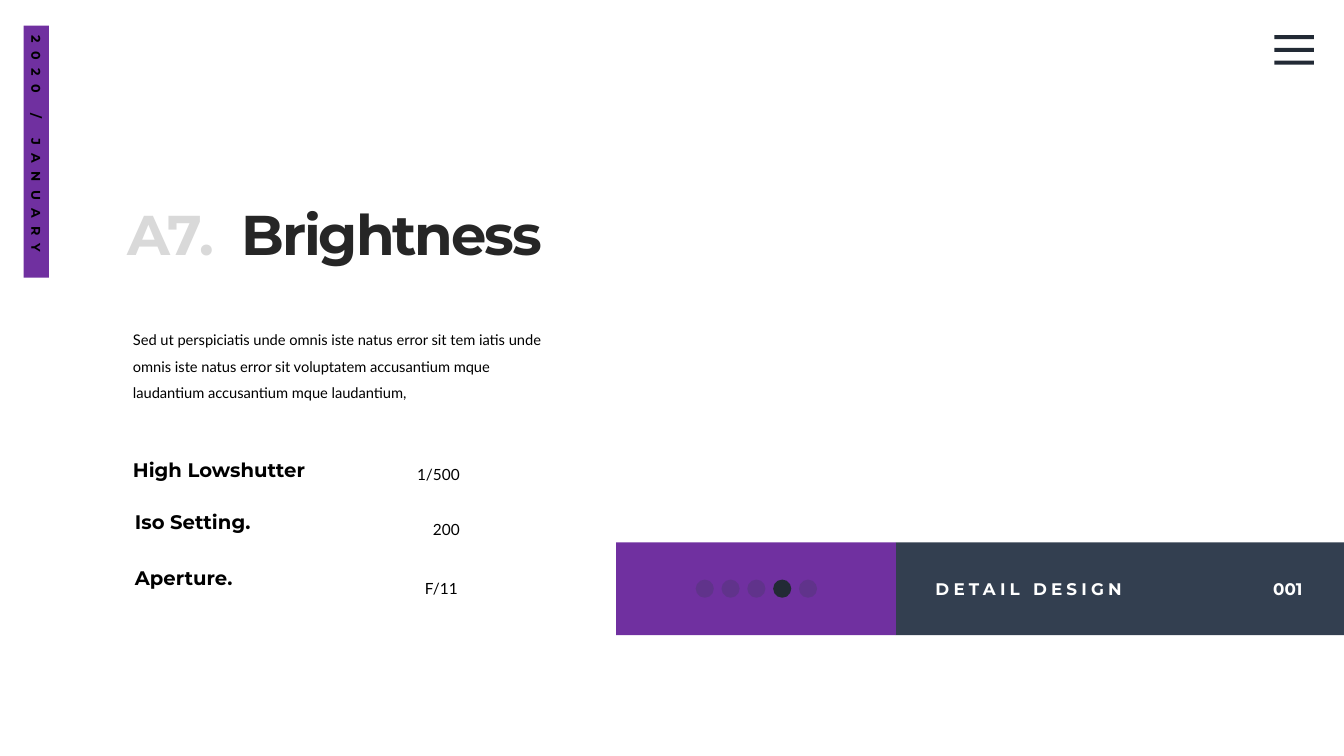
from lxml import etree
from pptx import Presentation
from pptx.dml.color import RGBColor
from pptx.enum.shapes import MSO_SHAPE
from pptx.enum.text import MSO_ANCHOR, MSO_AUTO_SIZE, PP_ALIGN
from pptx.oxml.ns import qn
from pptx.util import Inches, Pt

RECTANGLE, OVAL = MSO_SHAPE.RECTANGLE, MSO_SHAPE.OVAL
LEFT, RIGHT = PP_ALIGN.LEFT, PP_ALIGN.RIGHT
GROW, FIXED = MSO_AUTO_SIZE.SHAPE_TO_FIT_TEXT, MSO_AUTO_SIZE.NONE

WIDTH, HEIGHT = 13.33, 7.5
HEADING, BODY = "Montserrat", "Lato"
PURPLE, SLATE, NAVY = "7030A0", "333F50", "222A35"
WHITE, BLACK, PALE, CHARCOAL = "FFFFFF", "000000", "D9D9D9", "262626"

DATE = "2020 / JANUARY"
NUMBER, TITLE = "A7.", "Brightness"
INTRO = ("Sed ut perspiciatis unde omnis iste natus error sit tem iatis unde "
         "omnis iste natus error sit voluptatem accusantium mque "
         "laudantium accusantium mque laudantium,")
FOOTER, PAGE = "DETAIL DESIGN", "001"
# label, its left and top, value, its left and top
SETTINGS = [
    ("High Lowshutter", 1.22, 4.49, "1/500", 3.75, 4.47),
    ("Iso Setting.", 1.24, 5.01, "200", 3.75, 5.02),
    ("Aperture.", 1.24, 5.57, "F/11", 3.73, 5.6),
]
DOT_COUNT, ACTIVE_DOT = 5, 3
MENU_BAR_COUNT = 3

BAND_TOP, BAND_HEIGHT = 5.38, 0.92
BAND_LEFT, BAND_SPLIT = 6.11, WIDTH * 2 / 3
DOT_SIZE, DOT_STEP = 0.18, 0.256
MENU_STEP = 0.126


def color(hex_string):
    return RGBColor.from_string(hex_string)


def add_block(parent, kind, left, top, width, height, fill, opacity=None):
    """Add a borderless filled shape; opacity is a percentage."""
    shape = parent.shapes.add_shape(
        kind, Inches(left), Inches(top), Inches(width), Inches(height))
    shape.shadow.inherit = False
    shape.line.fill.background()
    shape.fill.solid()
    shape.fill.fore_color.rgb = color(fill)
    if opacity is not None:
        solid_color = shape.fill._xPr.find(".//" + qn("a:srgbClr"))
        etree.SubElement(solid_color, qn("a:alpha"), val=str(opacity * 1000))
    return shape


def write(shape, text, size, font, fill, bold=False, tracking=0, align=LEFT,
          line_spacing=None, wrap=False, fit=GROW):
    """Put one run into the shape; tracking is letter spacing in points."""
    frame = shape.text_frame
    frame.word_wrap = wrap
    frame.auto_size = fit
    paragraph = frame.paragraphs[0]
    paragraph.alignment = align
    if line_spacing:
        paragraph.line_spacing = line_spacing
    run = paragraph.add_run()
    run.text = text
    run.font.size = Pt(size)
    run.font.name = font
    run.font.bold = bold
    run.font.color.rgb = color(fill)
    if tracking:
        run._r.get_or_add_rPr().set("spc", str(int(tracking * 100)))


def add_text(slide, left, top, width, height, *content, **style):
    box = slide.shapes.add_textbox(
        Inches(left), Inches(top), Inches(width), Inches(height))
    write(box, *content, **style)


def add_footer(slide):
    add_block(slide, RECTANGLE, BAND_SPLIT, BAND_TOP,
              WIDTH - BAND_SPLIT, BAND_HEIGHT, SLATE)
    add_text(slide, 12.53, 5.69, 0.5, 0.3, PAGE, 12, HEADING, WHITE, bold=True)
    add_text(slide, 9.18, 5.69, 2.11, 0.3, FOOTER, 12, HEADING, WHITE,
             bold=True, tracking=3)
    add_block(slide, RECTANGLE, BAND_LEFT, BAND_TOP,
              BAND_SPLIT - BAND_LEFT, BAND_HEIGHT, PURPLE)
    dots = slide.shapes.add_group_shape()
    for index in range(DOT_COUNT):
        active = index == ACTIVE_DOT
        add_block(dots, OVAL, 6.9 + index * DOT_STEP, 5.75, DOT_SIZE, DOT_SIZE,
                  NAVY if active else SLATE, None if active else 25)


def add_date_and_menu(slide):
    date_tab = add_block(slide, RECTANGLE, -0.89, 1.38, 2.5, 0.25, PURPLE)
    date_tab.rotation = 90
    date_tab.text_frame.vertical_anchor = MSO_ANCHOR.MIDDLE
    write(date_tab, DATE, 9, HEADING, BLACK, bold=True, tracking=6)
    menu = slide.shapes.add_group_shape()
    for index in range(MENU_BAR_COUNT):
        add_block(menu, RECTANGLE, 12.64, 0.35 + index * MENU_STEP,
                  0.39, 0.04, NAVY)


def add_details(slide):
    add_text(slide, 1.17, 1.93, 1.13, 0.77, NUMBER, 40, HEADING, PALE, bold=True)
    add_text(slide, 2.3, 1.93, 3.33, 0.77, TITLE, 40, HEADING, CHARCOAL,
             bold=True, tracking=-1.5)
    add_text(slide, 1.22, 3.15, 4.41, 1.25, INTRO, 10.5, BODY, BLACK,
             line_spacing=1.5, wrap=True, fit=FIXED)
    for label, label_left, label_top, value, value_left, value_top in SETTINGS:
        add_text(slide, label_left, label_top, 2.64, 0.34, label, 14, HEADING,
                 BLACK, bold=True, wrap=True)
        add_text(slide, value_left, value_top, 0.91, 0.34, value, 11, BODY,
                 BLACK, align=RIGHT, line_spacing=1.5, wrap=True, fit=FIXED)


def main():
    presentation = Presentation()
    presentation.slide_width = Inches(WIDTH)
    presentation.slide_height = Inches(HEIGHT)
    slide = presentation.slides.add_slide(presentation.slide_layouts[6])
    add_footer(slide)
    add_date_and_menu(slide)
    add_details(slide)
    presentation.save("out.pptx")


if __name__ == "__main__":
    main()
